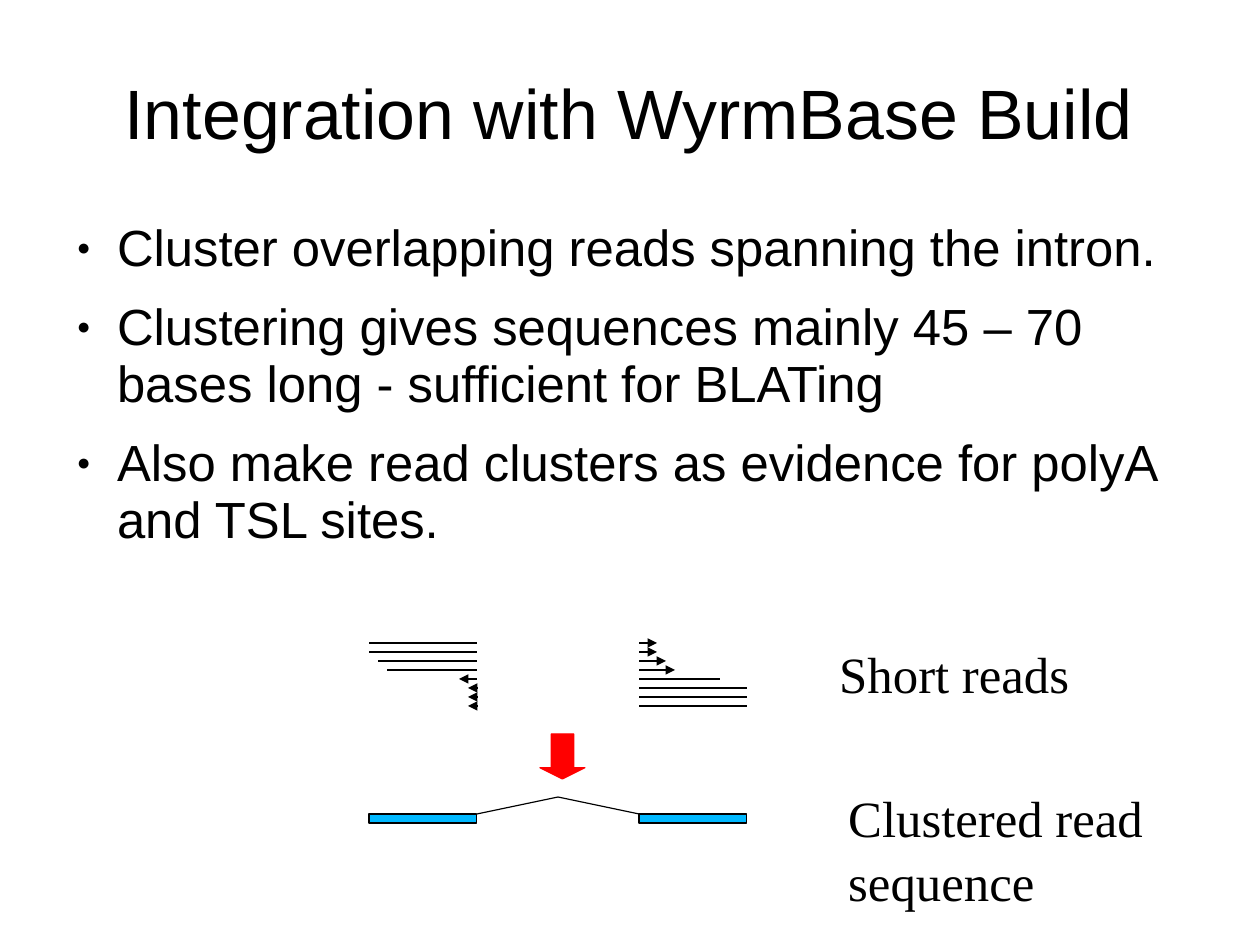
"""Build the slide on integrating clustered short reads with the build."""
import dataclasses

import lxml.etree
import pptx
import pptx.dml.color
import pptx.enum.shapes
import pptx.enum.text
import pptx.oxml.ns
import pptx.shapes.base
import pptx.slide
import pptx.text.text
import pptx.util

PX = 8000
BLACK = pptx.dml.color.RGBColor(0x00, 0x00, 0x00)
RED = pptx.dml.color.RGBColor(0xFF, 0x00, 0x00)
BLUE = pptx.dml.color.RGBColor(0x00, 0xB8, 0xFF)
WHITE = pptx.dml.color.RGBColor(0xFF, 0xFF, 0xFF)

LEFT_EXON, RIGHT_EXON, EXON_WIDTH = 369, 639, 108
DONOR, ACCEPTOR = LEFT_EXON + EXON_WIDTH, RIGHT_EXON
FIRST_READ, READ_PITCH = 643, 9
CLUSTER_TOP, INTRON_PEAK = 814, (558, 797)


@dataclasses.dataclass(frozen=True)
class SplitRead:
    """A read crossing the intron, by the outer ends of its two halves."""
    left: int
    right: int
    long_left: bool


@dataclasses.dataclass(frozen=True)
class Label:
    """A caption beside the diagram."""
    text: str
    box: tuple[int, int, int, int]


READS = (
    SplitRead(369, 657, True),
    SplitRead(369, 657, True),
    SplitRead(378, 666, True),
    SplitRead(387, 675, True),
    SplitRead(459, 720, False),
    SplitRead(468, 747, False),
    SplitRead(468, 747, False),
    SplitRead(468, 747, False),
)
LABELS = (
    Label("Short reads", (828, 634, 261, 72)),
    Label("Clustered read sequence", (837, 778, 397, 134)),
)
BULLETS = (
    "Cluster overlapping reads spanning the intron.",
    "Clustering gives sequences mainly 45 – 70 bases long - sufficient for BLATing",
    "Also make read clusters as evidence for polyA and TSL sites.",
)


def px(n: int) -> pptx.util.Emu:
    """Turn pixels into EMU."""
    return pptx.util.Emu(n * PX)


def sub(parent: lxml.etree._Element, tag: str, **attrs: str) -> lxml.etree._Element:
    """Append a drawing element to its parent."""
    return lxml.etree.SubElement(parent, pptx.oxml.ns.qn(tag), attrs)


def place(sp: pptx.shapes.base.BaseShape, box: tuple[int, int, int, int]) -> None:
    """Move and size a shape."""
    sp.left, sp.top, sp.width, sp.height = map(px, box)


def frame(tf: pptx.text.text.TextFrame, *, inset: tuple[int, int] | None = None,
          anchor: pptx.enum.text.MSO_ANCHOR = pptx.enum.text.MSO_ANCHOR.TOP) -> None:
    """Set wrapping, insets and anchor of a text frame."""
    tf.word_wrap = True
    tf.auto_size = pptx.enum.text.MSO_AUTO_SIZE.NONE
    tf.vertical_anchor = anchor
    if inset is not None:
        tf.margin_left = tf.margin_right = px(inset[0])
        tf.margin_top = tf.margin_bottom = px(inset[1])


def write(p: pptx.text.text._Paragraph, text: str, *, font: str = "Arial", size: int = 32,
          align: pptx.enum.text.PP_ALIGN = pptx.enum.text.PP_ALIGN.LEFT,
          spacing: float = 0.93, after: float = 0, bullet: bool = False) -> None:
    """Write one formatted paragraph."""
    p.alignment = align
    p.line_spacing = spacing
    p.space_before = pptx.util.Pt(0)
    p.space_after = pptx.util.Pt(after)
    r = p.add_run()
    r.text = text
    r.font.name = font
    r.font.size = pptx.util.Pt(size)
    r.font.color.rgb = BLACK
    if bullet:
        pPr = p._p.get_or_add_pPr()
        pPr.set("marL", str(px(54)))
        pPr.set("indent", str(px(-40)))
        sub(sub(pPr, "a:buClr"), "a:srgbClr", val=str(BLACK))
        sub(pPr, "a:buSzPct", val="45000")
        sub(pPr, "a:buFont", typeface="Arial")
        sub(pPr, "a:buChar", char="●")


def draw_line(slide: pptx.slide.Slide, start: tuple[int, int], end: tuple[int, int],
              arrow: bool = False) -> None:
    """Draw a thin black line, with an arrowhead at its end if asked."""
    cxn = slide.shapes.add_connector(
        pptx.enum.shapes.MSO_CONNECTOR.STRAIGHT, *map(px, start + end))
    cxn.line.color.rgb = BLACK
    cxn.line.width = pptx.util.Pt(0.75)
    if arrow:
        sub(cxn.line._get_or_add_ln(), "a:tailEnd", type="triangle")
    sub(cxn._element.spPr, "a:effectLst")


def draw_shape(slide: pptx.slide.Slide, kind: pptx.enum.shapes.MSO_SHAPE,
               box: tuple[int, int, int, int], fill: pptx.dml.color.RGBColor,
               line: pptx.dml.color.RGBColor) -> pptx.shapes.base.BaseShape:
    """Draw a filled preset shape."""
    sp = slide.shapes.add_shape(kind, *map(px, box))
    sp.shadow.inherit = False
    sp.fill.solid()
    sp.fill.fore_color.rgb = fill
    sp.line.color.rgb = line
    sp.line.width = pptx.util.Pt(0.75)
    return sp


def draw_text(slide: pptx.slide.Slide) -> None:
    """Fill the title and the bullet list."""
    title, body = slide.placeholders
    place(title, (63, 38, 1133, 157))
    frame(title.text_frame, inset=(0, 0), anchor=pptx.enum.text.MSO_ANCHOR.MIDDLE)
    write(title.text_frame.paragraphs[0], "Integration with WyrmBase Build",
          size=44, align=pptx.enum.text.PP_ALIGN.CENTER)
    place(body, (63, 221, 1133, 623))
    tf = body.text_frame
    frame(tf, inset=(0, 0))
    for i, text in enumerate(BULLETS):
        p = tf.add_paragraph() if i else tf.paragraphs[0]
        write(p, text, after=14.2, bullet=True)


def draw_diagram(slide: pptx.slide.Slide) -> None:
    """Draw the reads, the arrow, the clustered sequence and the labels."""
    for i, read in enumerate(READS):
        y = FIRST_READ + i * READ_PITCH
        draw_line(slide, (DONOR, y), (read.left, y), arrow=not read.long_left)
        draw_line(slide, (ACCEPTOR, y), (read.right, y), arrow=read.long_left)
    sp = draw_shape(slide, pptx.enum.shapes.MSO_SHAPE.DOWN_ARROW, (540, 734, 45, 45), RED, RED)
    sp.adjustments[0], sp.adjustments[1] = 0.5, 0.25
    for x in (LEFT_EXON, RIGHT_EXON):
        draw_shape(slide, pptx.enum.shapes.MSO_SHAPE.RECTANGLE,
                   (x, CLUSTER_TOP, EXON_WIDTH, READ_PITCH), BLUE, BLACK)
    draw_line(slide, (DONOR, CLUSTER_TOP), INTRON_PEAK)
    draw_line(slide, INTRON_PEAK, (ACCEPTOR, CLUSTER_TOP))
    for label in LABELS:
        tf = slide.shapes.add_textbox(*map(px, label.box)).text_frame
        frame(tf)
        write(tf.paragraphs[0], label.text, font="Times New Roman", spacing=1.05)


def main() -> None:
    """Build and save the slide."""
    prs = pptx.Presentation()
    prs.slide_width, prs.slide_height = px(1260), px(945)
    slide = prs.slides.add_slide(prs.slide_layouts[1])
    slide.background.fill.solid()
    slide.background.fill.fore_color.rgb = WHITE
    draw_text(slide)
    draw_diagram(slide)
    prs.save("out.pptx")


if __name__ == "__main__":
    main()
